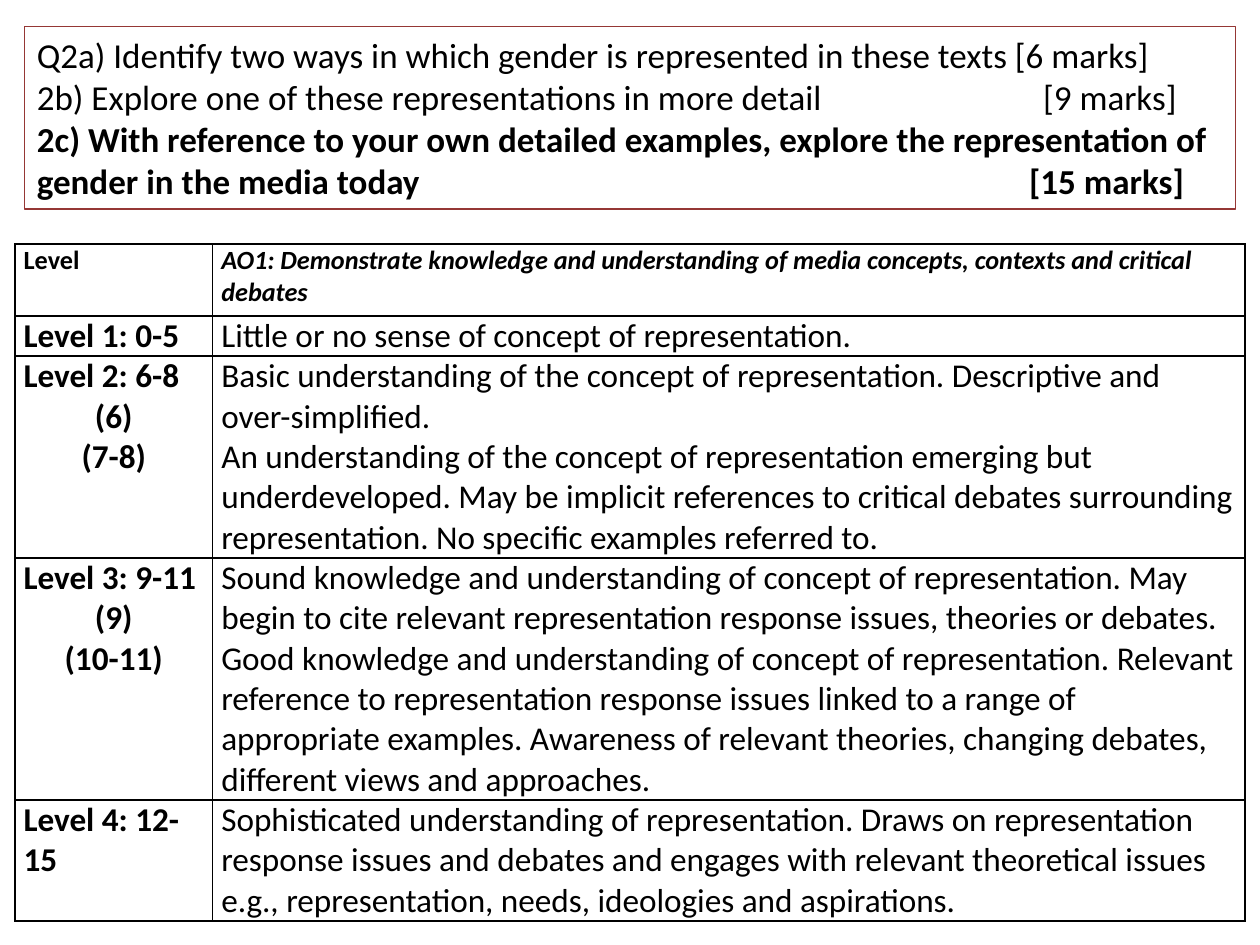
from pptx import Presentation
from pptx.dml.color import RGBColor
from pptx.enum.shapes import MSO_SHAPE
from pptx.enum.text import MSO_ANCHOR, PP_ALIGN
from pptx.oxml.xmlchemy import OxmlElement
from pptx.util import Pt

RECTANGLE = MSO_SHAPE.RECTANGLE
TOP, MIDDLE = MSO_ANCHOR.TOP, MSO_ANCHOR.MIDDLE
LEFT, CENTER = PP_ALIGN.LEFT, PP_ALIGN.CENTER

BLACK = RGBColor(0x00, 0x00, 0x00)
DARK_RED = RGBColor(0x95, 0x37, 0x35)
FONT = "Calibri"

# Each question: text, bold, position of the tab stop before the marks
QUESTIONS = [
    ("Q2a) Identify two ways in which gender is represented in these texts [6 marks]",
     False, None),
    ("2b) Explore one of these representations in more detail\t[9 marks]", False, 575),
    ("2c) With reference to your own detailed examples, explore the representation of "
     "gender in the media today\t[15 marks]", True, 567),
]

HEADINGS = [
    "Level",
    "AO1: Demonstrate knowledge and understanding of media concepts, "
    "contexts and critical debates",
]

# Each level: paragraphs of the mark range, paragraphs of the description
LEVELS = [
    (["Level 1: 0-5"], ["Little or no sense of concept of representation."]),
    (["Level 2: 6-8", "(6)", "(7-8)"],
     ["Basic understanding of the concept of representation. Descriptive and "
      "over-simplified.",
      "An understanding of the concept of representation emerging but underdeveloped. "
      "May be implicit references to critical debates surrounding representation. "
      "No specific examples referred to."]),
    (["Level 3: 9-11", "(9)", "(10-11)"],
     ["Sound knowledge and understanding of concept of representation. May begin to "
      "cite relevant representation response issues, theories or debates.",
      "Good knowledge and understanding of concept of representation. Relevant "
      "reference to representation response issues linked to a range of appropriate "
      "examples. Awareness of relevant theories, changing debates, different views "
      "and approaches."]),
    (["Level 4: 12-15"],
     ["Sophisticated understanding of representation. Draws on representation response "
      "issues and debates and engages with relevant theoretical issues e.g., "
      "representation, needs, ideologies and aspirations."]),
]

COLUMN_WIDTHS = [113, 590]
ROW_HEIGHTS = [41, 23, 114.5, 136.5, 68]


def write_paragraphs(frame, texts, size, bold=False, italic=False):
    """Write one paragraph per text and return the paragraphs."""
    paras = []
    for index, text in enumerate(texts):
        para = frame.paragraphs[0] if index == 0 else frame.add_paragraph()
        para.text = text
        para.alignment = LEFT
        para.font.name = FONT
        para.font.size = Pt(size)
        para.font.bold = bold
        para.font.italic = italic
        para.font.color.rgb = BLACK
        paras.append(para)
    return paras


def add_tab_stop(para, position):
    tab_list = OxmlElement("a:tabLst")
    tab = OxmlElement("a:tab")
    tab.set("pos", str(Pt(position)))
    tab.set("algn", "l")
    tab_list.append(tab)
    properties = para._p.get_or_add_pPr()
    properties.insert_element_before(tab_list, "a:defRPr", "a:extLst")


def add_question_box(page):
    box = page.shapes.add_shape(RECTANGLE, Pt(14), Pt(15), Pt(692), Pt(104.5))
    box.shadow.inherit = False
    box.fill.background()
    box.line.color.rgb = DARK_RED
    box.line.width = Pt(0.75)
    frame = box.text_frame
    frame.word_wrap = True
    frame.vertical_anchor = MIDDLE
    paras = write_paragraphs(frame, [text for text, _, _ in QUESTIONS], 20)
    for para, (_, bold, tab_position) in zip(paras, QUESTIONS):
        para.font.bold = bold
        if tab_position:
            add_tab_stop(para, tab_position)


def add_borders(cell):
    properties = cell._tc.get_or_add_tcPr()
    for position, side in enumerate(("a:lnL", "a:lnR", "a:lnT", "a:lnB")):
        line = OxmlElement(side)
        line.set("w", str(Pt(1)))
        fill = OxmlElement("a:solidFill")
        color = OxmlElement("a:srgbClr")
        color.set("val", str(BLACK))
        fill.append(color)
        line.append(fill)
        properties.insert(position, line)


def fill_cell(cell, texts, size, bold=False, italic=False):
    cell.fill.background()
    cell.vertical_anchor = TOP
    cell.margin_left = cell.margin_right = Pt(5)
    cell.margin_top = cell.margin_bottom = 0
    add_borders(cell)
    return write_paragraphs(cell.text_frame, texts, size, bold, italic)


def add_level_table(page):
    table = page.shapes.add_table(
        len(ROW_HEIGHTS), len(COLUMN_WIDTHS), Pt(8.5), Pt(139.5),
        Pt(sum(COLUMN_WIDTHS)), Pt(sum(ROW_HEIGHTS))).table
    table.first_row = False
    table.horz_banding = False
    for column, width in zip(table.columns, COLUMN_WIDTHS):
        column.width = Pt(width)
    for row, height in zip(table.rows, ROW_HEIGHTS):
        row.height = Pt(height)

    # Heading row
    for column, heading in enumerate(HEADINGS):
        fill_cell(table.cell(0, column), [heading], 15, bold=True, italic=column == 1)

    # Level rows, with the split of marks centred under the level
    for row, (marks, description) in enumerate(LEVELS, start=1):
        paras = fill_cell(table.cell(row, 0), marks, 19, bold=True)
        for para in paras[1:]:
            para.alignment = CENTER
        fill_cell(table.cell(row, 1), description, 19)


def main():
    deck = Presentation()
    deck.slide_width, deck.slide_height = Pt(720), Pt(540)
    page = deck.slides.add_slide(deck.slide_layouts[6])
    add_level_table(page)
    add_question_box(page)
    deck.save("out.pptx")


if __name__ == "__main__":
    main()
